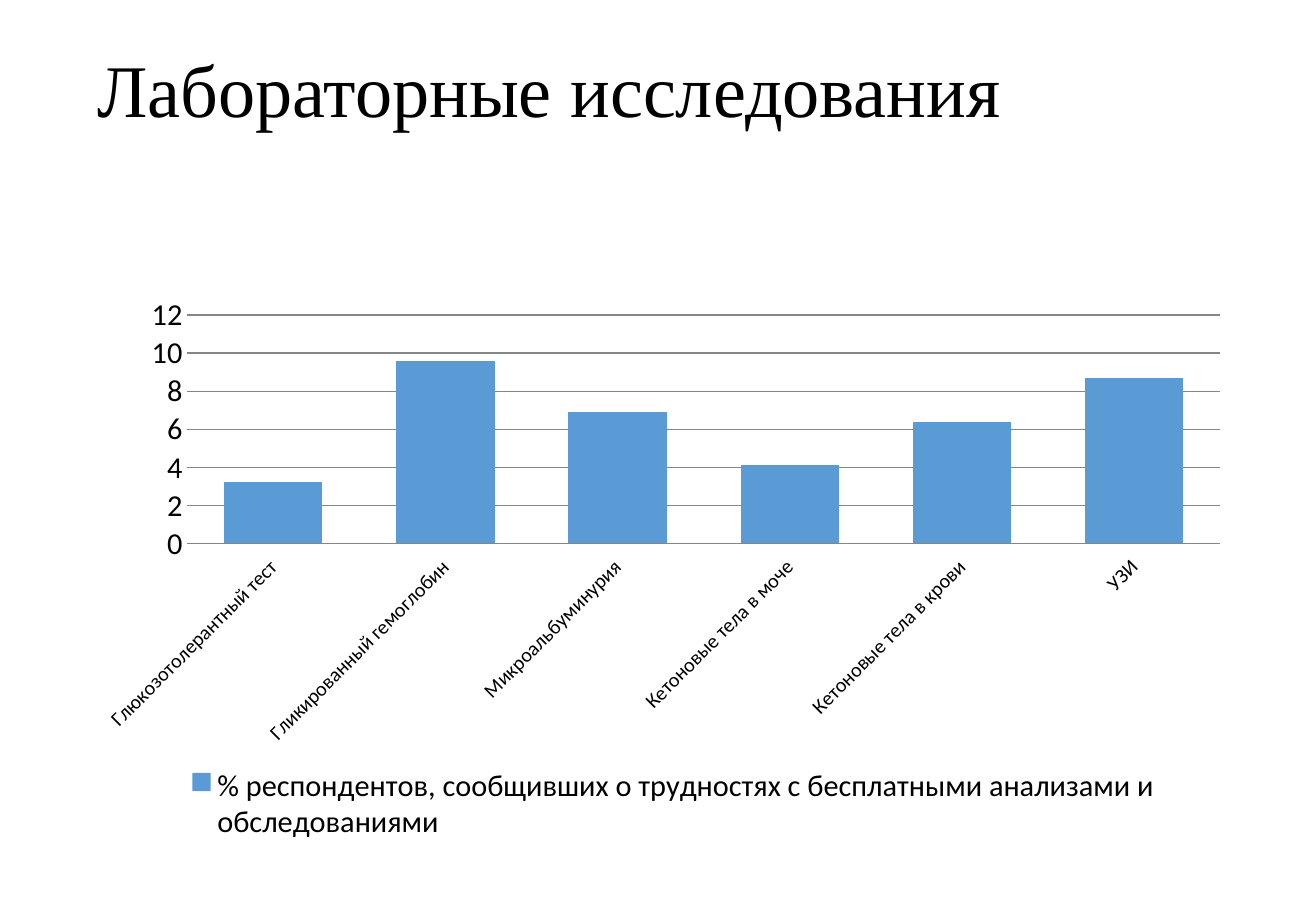
from pptx import Presentation
from pptx.chart.data import CategoryChartData
from pptx.dml.color import RGBColor
from pptx.enum import chart as ch, text
from pptx.oxml import parse_xml
from pptx.oxml.ns import nsdecls
from pptx.util import Inches, Pt

COLORS = {"text": "000000", "bar": "5B9BD5", "grid": "868686"}
SERIES = ("% респондентов, сообщивших о трудностях с бесплатными "
          "анализами и обследованиями")
DIFFICULTIES = {
    "Глюкозотолерантный тест": 3.2,
    "Гликированный гемоглобин": 9.6,
    "Микроальбуминурия": 6.9,
    "Кетоновые тела в моче": 4.1,
    "Кетоновые тела в крови": 6.4,
    "УЗИ": 8.7,
}
PLOT_AREA = {"x": 0.071, "y": 0.227, "w": 0.911, "h": 0.332}


def rgb(name):
    return RGBColor.from_string(COLORS[name])


def style_font(font, size, name="Calibri", color="text"):
    font.name = name
    font.size = Pt(size)
    font.bold = False
    font.color.rgb = rgb(color)


def place(shape, left, top, width, height):
    shape.left, shape.top = Inches(left), Inches(top)
    shape.width, shape.height = Inches(width), Inches(height)


def write_text(shape, content, size=18, font="Calibri", color="text",
               align=text.PP_ALIGN.LEFT, anchor=text.MSO_ANCHOR.MIDDLE,
               spacing=0.9):
    tf = shape.text_frame
    tf.word_wrap = True
    tf.auto_size = text.MSO_AUTO_SIZE.NONE
    tf.vertical_anchor = anchor
    p = tf.paragraphs[0]
    p.alignment = align
    p.line_spacing = spacing
    r = p.add_run()
    r.text = content
    style_font(r.font, size, font, color)


def set_plot_area(chart, fractions):
    """Fix the inner plot area as fractions of the chart frame."""
    plot_area = chart._chartSpace.chart.plotArea
    for old in plot_area.xpath("c:layout"):
        plot_area.remove(old)
    modes = "".join(f'<c:{k}Mode val="edge"/>' for k in "xy")
    sizes = "".join(f'<c:{k} val="{v}"/>' for k, v in fractions.items())
    plot_area.insert(0, parse_xml(
        f'<c:layout {nsdecls("c")}><c:manualLayout>'
        f'<c:layoutTarget val="inner"/>{modes}{sizes}'
        '</c:manualLayout></c:layout>'))


def style_axes(chart):
    cat, val = chart.category_axis, chart.value_axis
    for axis, size in ((cat, 12), (val, 18)):
        axis.major_tick_mark = axis.minor_tick_mark = ch.XL_TICK_MARK.NONE
        style_font(axis.tick_labels.font, size)
    cat.tick_label_position = ch.XL_TICK_LABEL_POSITION.LOW
    cat.format.line.color.rgb = rgb("grid")
    cat._element.txPr.bodyPr.set("rot", "-2700000")
    val.minimum_scale, val.maximum_scale, val.major_unit = 0, 12, 2
    val.format.line.fill.background()
    val.has_major_gridlines = True
    val.major_gridlines.format.line.color.rgb = rgb("grid")


def add_column_chart(s, left, top, width, height):
    data = CategoryChartData(number_format="General")
    data.categories = list(DIFFICULTIES)
    data.add_series(SERIES, list(DIFFICULTIES.values()))
    chart = s.shapes.add_chart(
        ch.XL_CHART_TYPE.COLUMN_CLUSTERED, Inches(left), Inches(top),
        Inches(width), Inches(height), data).chart
    chart.has_title = False
    style_font(chart.font, 18)
    style_axes(chart)
    set_plot_area(chart, PLOT_AREA)

    plot = chart.plots[0]
    plot.vary_by_categories = False
    plot.gap_width, plot.overlap = 75, -25
    fill = plot.series[0].format.fill
    fill.solid()
    fill.fore_color.rgb = rgb("bar")

    chart.has_legend = True
    chart.legend.position = ch.XL_LEGEND_POSITION.BOTTOM
    chart.legend.include_in_layout = False
    style_font(chart.legend.font, 18)


def main():
    prs = Presentation()
    prs.slide_width, prs.slide_height = Inches(10.83), Inches(7.5)
    s = prs.slides.add_slide(prs.slide_layouts[5])
    title = s.shapes.title
    place(title, 0.7, 0.29, 9.34, 0.96)
    write_text(title, "Лабораторные исследования", size=44,
               font="Times New Roman")
    add_column_chart(s, 0.87, 1.31, 9.34, 5.66)
    prs.save("out.pptx")


if __name__ == "__main__":
    main()
